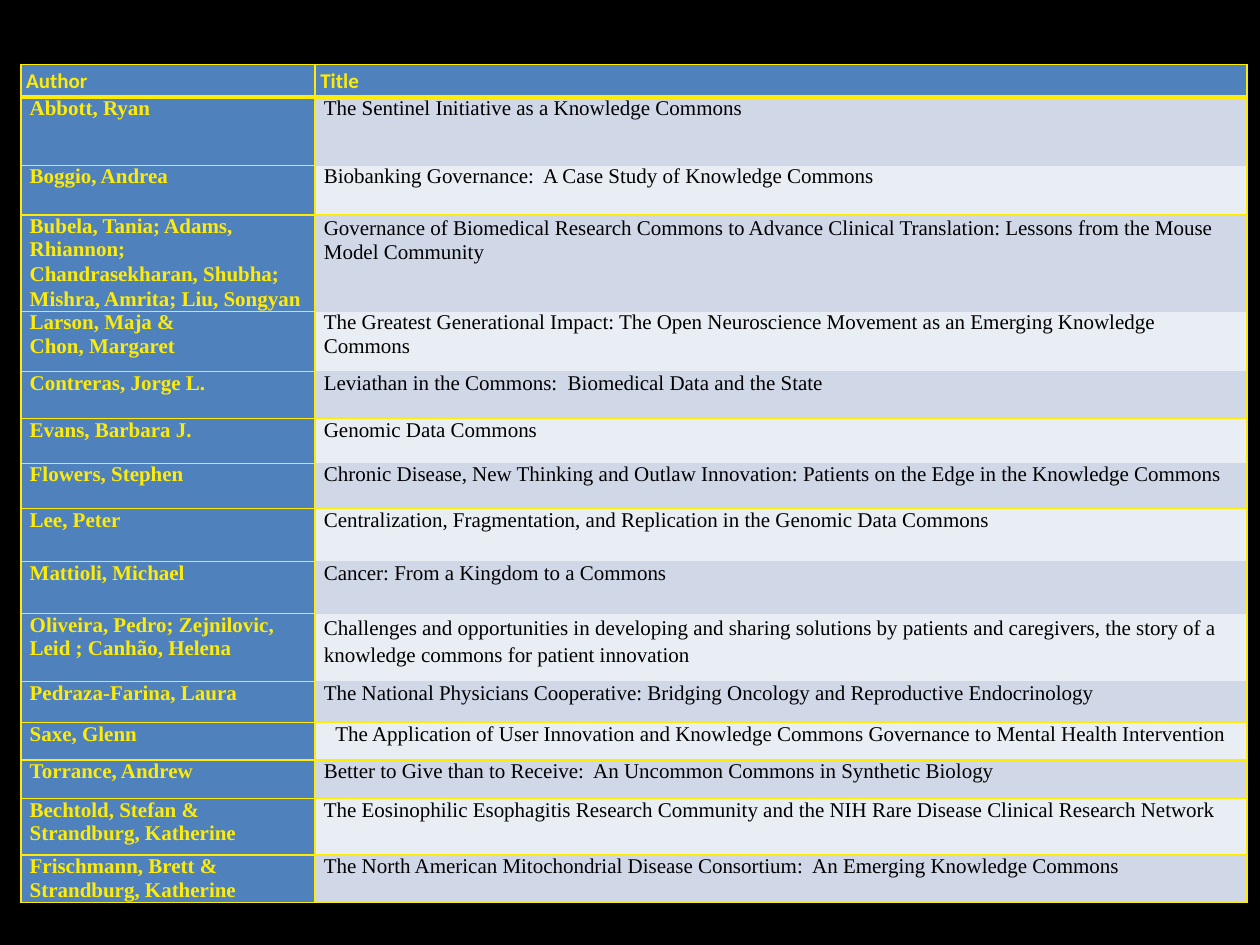
from lxml.etree import SubElement
from pptx import Presentation
from pptx.dml.color import RGBColor
from pptx.enum.text import PP_ALIGN
from pptx.oxml.ns import qn
from pptx.util import Pt

YELLOW, BLUE, BLACK = "FFEB08", "4F81BD", "000000"
BANDS = ("D0D8E8", "E9EDF4")
HEADINGS = ("Author", "Title")
HEADER_HEIGHT = 18.5
COLUMN_SHARES = (0.24, 0.76)

# Row height, authors (one paragraph per line), chapter title
CHAPTERS = [
    (39, "Abbott, Ryan", "The Sentinel Initiative as a Knowledge Commons"),
    (28.3, "Boggio, Andrea", "Biobanking Governance:  A Case Study of Knowledge Commons"),
    (55, "Bubela, Tania; Adams, Rhiannon;\nChandrasekharan, Shubha;\nMishra, Amrita; Liu, Songyan",
     "Governance of Biomedical Research Commons to Advance Clinical Translation: "
     "Lessons from the Mouse Model Community"),
    (34.4, "Larson, Maja &\nChon, Margaret",
     "The Greatest Generational Impact: The Open Neuroscience Movement "
     "as an Emerging Knowledge Commons"),
    (26.8, "Contreras, Jorge L.", "Leviathan in the Commons:  Biomedical Data and the State"),
    (25.7, "Evans, Barbara J.", "Genomic Data Commons"),
    (25.9, "Flowers, Stephen",
     "Chronic Disease, New Thinking and Outlaw Innovation: "
     "Patients on the Edge in the Knowledge Commons"),
    (30.4, "Lee, Peter",
     "Centralization, Fragmentation, and Replication in the Genomic Data Commons"),
    (29.5, "Mattioli, Michael", "Cancer: From a Kingdom to a Commons"),
    (39, "Oliveira, Pedro; Zejnilovic, Leid ; Canhão, Helena",
     "Challenges and opportunities in developing and sharing solutions by patients and "
     "caregivers, the story of a knowledge commons for patient innovation"),
    (23.5, "Pedraza-Farina, Laura",
     "The National Physicians Cooperative: Bridging Oncology and Reproductive Endocrinology"),
    (21.4, "Saxe, Glenn",
     "The Application of User Innovation and Knowledge Commons Governance "
     "to Mental Health Intervention"),
    (22, "Torrance, Andrew",
     "Better to Give than to Receive:  An Uncommon Commons in Synthetic Biology"),
    (32.3, "Bechtold, Stefan &\nStrandburg, Katherine",
     "The Eosinophilic Esophagitis Research Community and the NIH Rare Disease "
     "Clinical Research Network"),
    (27, "Frischmann, Brett &\nStrandburg, Katherine",
     "The North American Mitochondrial Disease Consortium:  An Emerging Knowledge Commons"),
]

HEADER_STYLE = {"name": "Calibri", "size": Pt(12), "bold": True}
AUTHOR_STYLE = {"name": "Times New Roman", "size": Pt(12), "bold": True}
TITLE_STYLE = {**AUTHOR_STYLE, "bold": False}

# (row, column): line spacing of each paragraph, where it is not single
LINE_SPACING = {
    (0, 0): [1.15],
    (0, 1): [1.15],
    (3, 0): [1, 1.07, 1.07],
    (3, 1): [1.07],
    (10, 1): [1.15],
}
CENTRED = {(12, 1)}


def rgb(color):
    return RGBColor.from_string(color)


def add_borders(cell, bottom):
    """Rule all four sides; the lines must precede the fill in the cell properties."""
    properties = cell._tc.get_or_add_tcPr()
    widths = {"a:lnL": 1, "a:lnR": 1, "a:lnT": 1, "a:lnB": bottom}
    for index, (side, width) in enumerate(widths.items()):
        line = SubElement(properties, qn(side), w=str(Pt(width)))
        SubElement(SubElement(line, qn("a:solidFill")), qn("a:srgbClr"), val=YELLOW)
        properties.insert(index, line)


def fill_cell(table, position, text, style, color, background):
    row, column = position
    cell = table.cell(row, column)
    cell.fill.solid()
    cell.fill.fore_color.rgb = rgb(background)
    cell.margin_left = cell.margin_right = Pt(5 if row else 3)
    cell.margin_top = cell.margin_bottom = 0
    add_borders(cell, bottom=1 if row else 3)
    cell.text = text
    for index, paragraph in enumerate(cell.text_frame.paragraphs):
        paragraph.line_spacing = LINE_SPACING.get(position, [1] * (index + 1))[index]
        if position in CENTRED:
            paragraph.alignment = PP_ALIGN.CENTER
        font = paragraph.runs[0].font
        font.color.rgb = rgb(color)
        for attribute, value in style.items():
            setattr(font, attribute, value)


def add_chapter_table(slide, left, top, width):
    heights = [HEADER_HEIGHT] + [chapter[0] for chapter in CHAPTERS]
    table = slide.shapes.add_table(
        len(heights), len(HEADINGS), Pt(left), Pt(top), Pt(width), Pt(sum(heights))
    ).table
    table.horz_banding = False
    for column, share in zip(table.columns, COLUMN_SHARES):
        column.width = Pt(width * share)
    for row, height in zip(table.rows, heights):
        row.height = Pt(height)

    for column, heading in enumerate(HEADINGS):
        fill_cell(table, (0, column), heading, HEADER_STYLE, YELLOW, BLUE)
    for row, (_, authors, title) in enumerate(CHAPTERS, start=1):
        fill_cell(table, (row, 0), authors, AUTHOR_STYLE, YELLOW, BLUE)
        fill_cell(table, (row, 1), title, TITLE_STYLE, BLACK, BANDS[(row - 1) % 2])


def main():
    presentation = Presentation()
    presentation.slide_width, presentation.slide_height = Pt(720), Pt(540)
    slide = presentation.slides.add_slide(presentation.slide_layouts[6])
    slide.background.fill.solid()
    slide.background.fill.fore_color.rgb = rgb(BLACK)
    add_chapter_table(slide, left=12, top=37, width=700.5)
    presentation.save("out.pptx")


if __name__ == "__main__":
    main()
